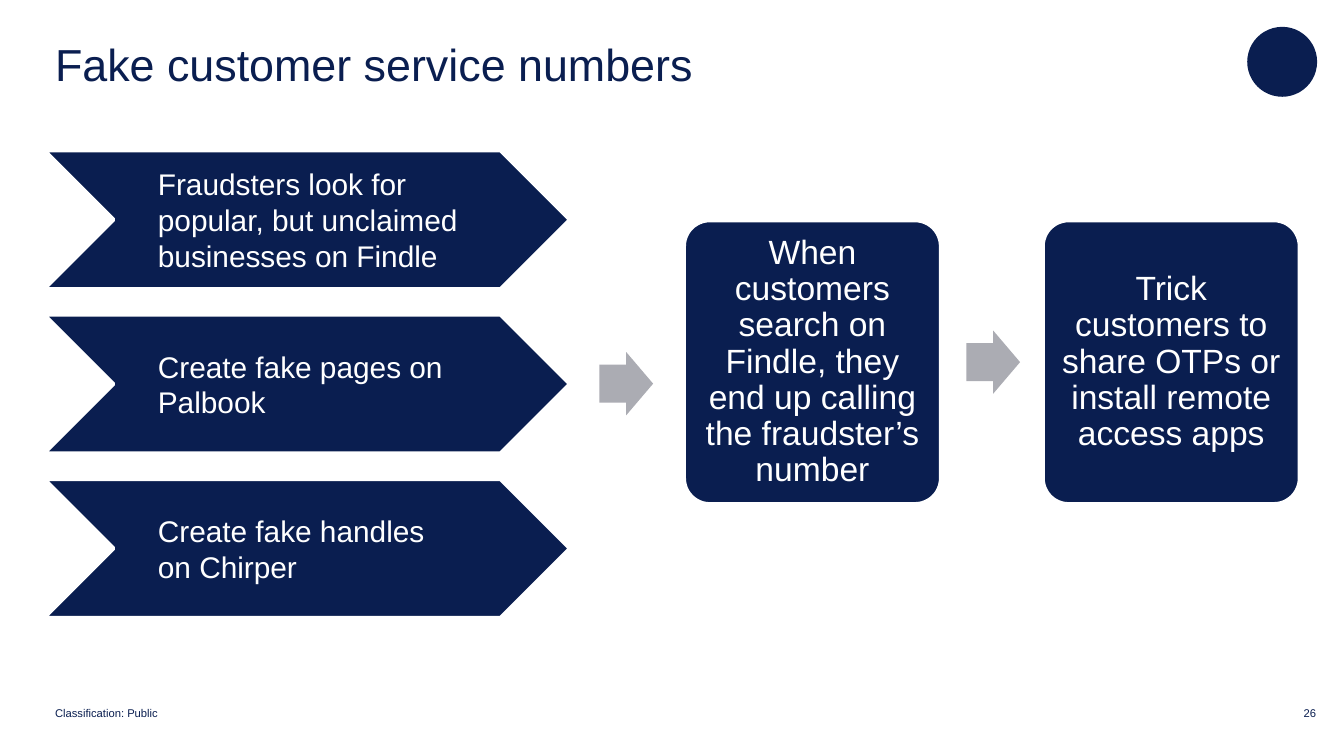
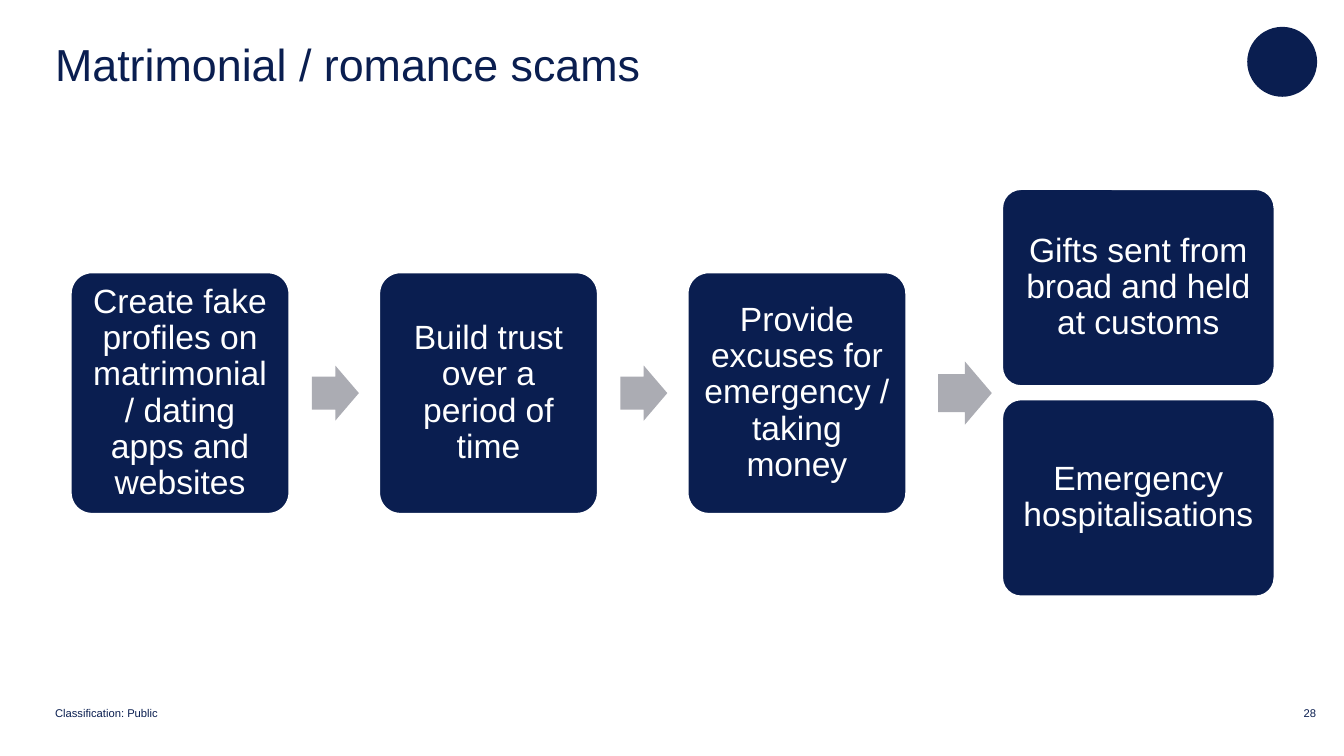
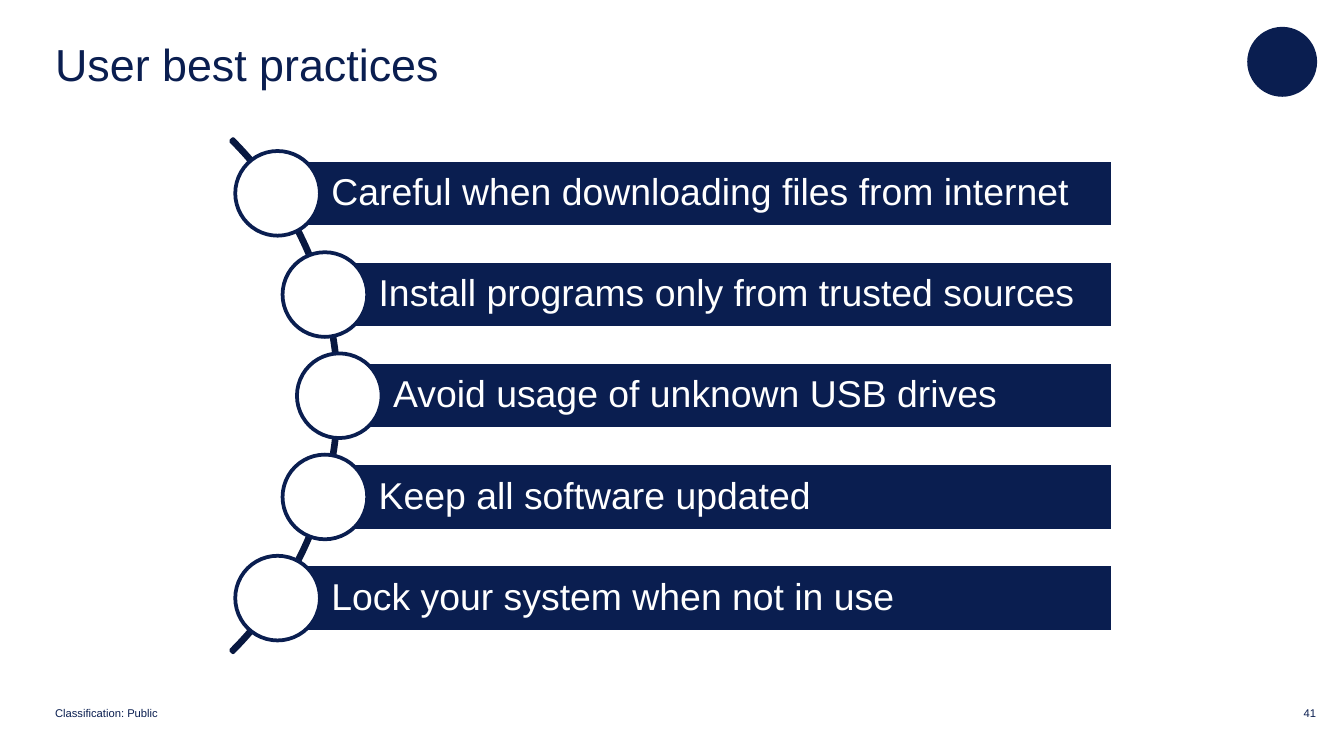
from math import sqrt

from pptx import Presentation
from pptx.dml.color import RGBColor
from pptx.enum.shapes import MSO_SHAPE
from pptx.enum.text import MSO_ANCHOR, MSO_AUTO_SIZE, PP_ALIGN
from pptx.util import Inches, Pt

NAVY = RGBColor(0x0A, 0x1E, 0x50)
ARC_NAVY = RGBColor(0x08, 0x18, 0x40)
GREY = RGBColor(0xAB, 0xAC, 0xB3)
WHITE = RGBColor(0xFF, 0xFF, 0xFF)
FONT = "Arial"

# The slide is a grid of 100 columns by 56.25 rows.
CELL = Inches(0.1)
COLUMNS, ROWS = 100, 56.25
MARGIN = 4.1

CHEVRON, CARD = MSO_SHAPE.CHEVRON, MSO_SHAPE.ROUNDED_RECTANGLE
ARROW, ARC = MSO_SHAPE.RIGHT_ARROW, MSO_SHAPE.BLOCK_ARC
CIRCLE, BAR = MSO_SHAPE.OVAL, MSO_SHAPE.RECTANGLE
LEFT, CENTER = PP_ALIGN.LEFT, PP_ALIGN.CENTER
TOP, MIDDLE = MSO_ANCHOR.TOP, MSO_ANCHOR.MIDDLE
FIXED, GROW = MSO_AUTO_SIZE.NONE, MSO_AUTO_SIZE.SHAPE_TO_FIT_TEXT


def grid(*cells):
    return [round(cell * CELL) for cell in cells]


def write(shape, text, size, color, align=LEFT, anchor=MIDDLE, insets=(0, 0, 0, 0), spacing=1.0):
    """Fill a shape with one paragraph; insets run left, top, right, bottom."""
    frame = shape.text_frame
    frame.word_wrap = True
    frame.auto_size = FIXED
    frame.vertical_anchor = anchor
    (frame.margin_left, frame.margin_top,
     frame.margin_right, frame.margin_bottom) = grid(*insets)
    frame.text = text
    paragraph = frame.paragraphs[0]
    paragraph.alignment = align
    paragraph.line_spacing = spacing
    paragraph.font.name = FONT
    paragraph.font.size = Pt(size)
    paragraph.font.color.rgb = color


def add_figure(slide, preset, box, fill=None, line=None, adjustments=()):
    figure = slide.shapes.add_shape(preset, *grid(*box))
    figure.shadow.inherit = False
    if fill is None:
        figure.fill.background()
    else:
        figure.fill.solid()
        figure.fill.fore_color.rgb = fill
    if line is None:
        figure.line.fill.background()
    else:
        figure.line.color.rgb = line
        figure.line.width = Pt(2)
    for index, value in enumerate(adjustments):
        figure.adjustments[index] = value
    return figure


def add_footer(slide, left, width, text):
    footer = slide.shapes.add_textbox(*grid(left, 52.7, width, 0.9))
    write(footer, text, 6, NAVY, anchor=TOP, spacing=0.85)
    footer.text_frame.word_wrap = False
    footer.text_frame.auto_size = GROW


def add_page(prs, title, number):
    """Add a slide with the shared title, corner disc and footers."""
    slide = prs.slides.add_slide(prs.slide_layouts[5])
    heading = slide.shapes.title
    heading.left, heading.top, heading.width, heading.height = grid(MARGIN, 1.8, 87.7, 5.9)
    write(heading, title, 24, NAVY)
    add_figure(slide, CIRCLE, (92.8, 2, 5.2, 5.2), NAVY)
    add_footer(slide, MARGIN, 7.8, "Classification: Public")
    add_footer(slide, 97, 1, str(number))
    return slide


def add_chevron(slide, top, text):
    chevron = add_figure(slide, CHEVRON, (3.3, top, 39.1, 10.3), NAVY, WHITE)
    write(chevron, text, 16, WHITE, insets=(3.3, 0.2, 3, 0.2))


def add_card(slide, box, text):
    card = add_figure(slide, CARD, box, NAVY, WHITE, [0.1])
    write(card, text, 18, WHITE, CENTER, insets=(0.7, 0.7, 0.7, 0.7), spacing=0.9)


def add_arrow(slide, left, middle, width=4.0, height=4.7):
    add_figure(slide, ARROW, (left, middle - height / 2, width, height), GREY,
               adjustments=[0.6, 0.5])


def add_fake_numbers(prs):
    slide = add_page(prs, "Fake customer service numbers", 26)
    tactics = ["Fraudsters look for popular, but unclaimed businesses on Findle",
               "Create fake pages on Palbook",
               "Create fake handles on Chirper"]
    for row, tactic in enumerate(tactics):
        add_chevron(slide, 11.2 + 12.23 * row, tactic)
    outcomes = ["When customers search on Findle, they end up calling the fraudster’s number",
                "Trick customers to share OTPs or install remote access apps"]
    for column, outcome in enumerate(outcomes):
        add_card(slide, (50.9 + 26.7 * column, 16.4, 19.1, 21.1), outcome)
    add_arrow(slide, 71.9, 26.95)
    add_arrow(slide, 44.6, 28.55)


def add_romance_scams(prs):
    slide = add_page(prs, "Matrimonial / romance scams", 28)
    steps = ["Create fake profiles on matrimonial / dating apps and websites",
             "Build trust over a period of time",
             "Provide excuses for emergency / taking money"]
    middle, pitch = 29.25, 22.95
    for column, step in enumerate(steps):
        left = 5.2 + pitch * column
        if column:
            add_arrow(slide, left - 4.95, middle, 3.5, 4.1)
        add_card(slide, (left, middle - 9.05, 16.4, 18.1), step)
    add_arrow(slide, 69.8, middle)
    excuses = ["Gifts sent from broad and held at customs", "Emergency hospitalisations"]
    for row, excuse in enumerate(excuses):
        add_card(slide, (74.5, 14 + 15.65 * row, 20.4, 14.8), excuse)


def add_best_practices(prs):
    slide = add_page(prs, "User best practices", 41)
    practices = ["Careful when downloading files from internet",
                 "Install programs only from trusted sources",
                 "Avoid usage of unknown USB drives",
                 "Keep all software updated",
                 "Lock your system when not in use"]
    hub_x, hub_y, radius = -1.75, 29.45, 27
    pitch, bar_height, bar_right, node = 7.53, 5, 82.8, 6.3
    add_figure(slide, ARC, (hub_x - radius, hub_y - radius, 2 * radius, 2 * radius),
               line=ARC_NAVY, adjustments=[189, 27, 0.004])
    for row, practice in enumerate(practices):
        drop = pitch * (row - len(practices) // 2)
        x, y = hub_x + sqrt(radius ** 2 - drop ** 2), hub_y + drop
        bar = add_figure(slide, BAR, (x, y - bar_height / 2, bar_right - x, bar_height),
                         NAVY, WHITE)
        write(bar, practice, 20, WHITE, insets=(4, 0.6, 0.6, 0.6), spacing=0.9)
        add_figure(slide, CIRCLE, (x - node / 2, y - node / 2, node, node), WHITE, NAVY)


def main():
    prs = Presentation()
    prs.slide_width, prs.slide_height = grid(COLUMNS, ROWS)
    add_fake_numbers(prs)
    add_romance_scams(prs)
    add_best_practices(prs)
    prs.save("out.pptx")


if __name__ == "__main__":
    main()
